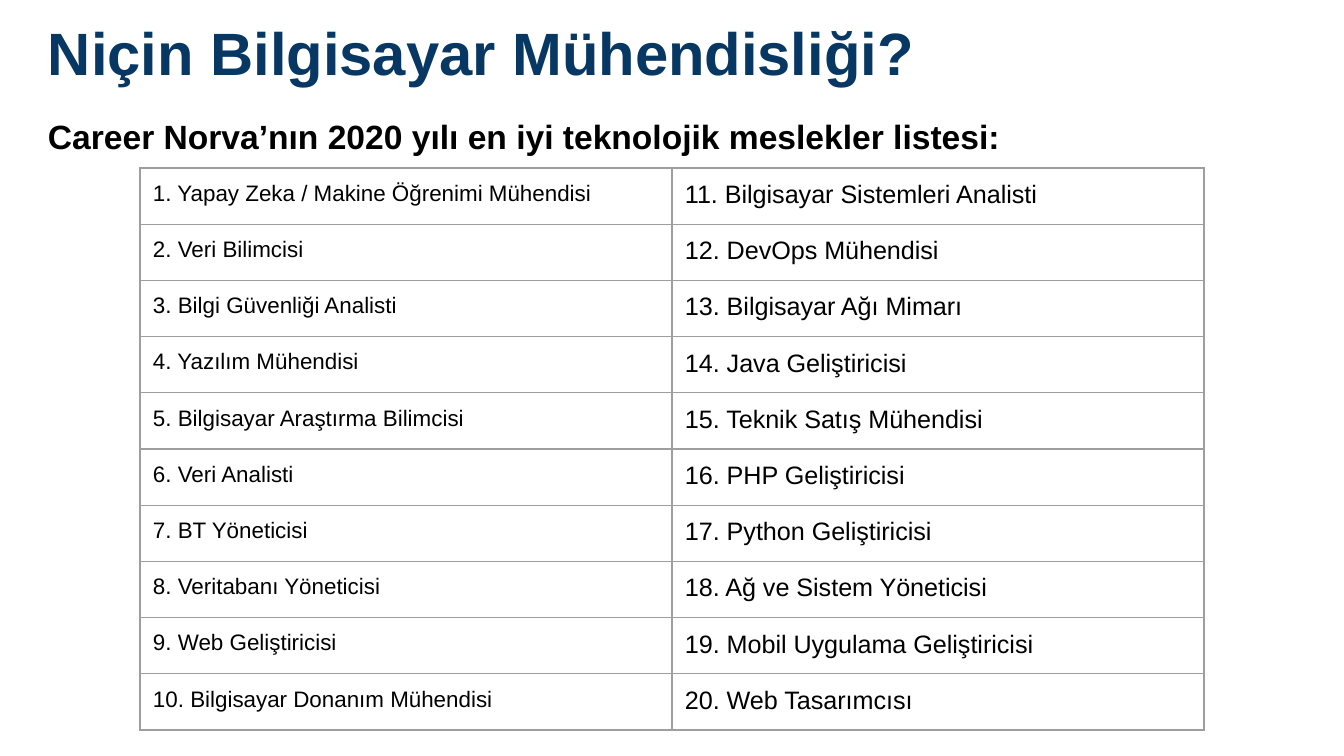
from lxml import etree
from pptx import Presentation
from pptx.dml.color import RGBColor
from pptx.enum.text import MSO_ANCHOR, PP_ALIGN
from pptx.oxml.ns import qn
from pptx.util import Emu, Pt

PX = 914400 / 134.4
TOP = MSO_ANCHOR.TOP
LEFT, JUSTIFY = PP_ALIGN.LEFT, PP_ALIGN.JUSTIFY

NAVY = RGBColor(0x07, 0x37, 0x63)
BLACK = RGBColor(0x00, 0x00, 0x00)
GREY = RGBColor(0x9E, 0x9E, 0x9E)

INSET = 13
ROW_HEIGHT = 56
COLUMN_WIDTH = 532
COLUMN_SIZES = (12, 13.5)

JOBS = [
    "Yapay Zeka / Makine Öğrenimi Mühendisi",
    "Veri Bilimcisi",
    "Bilgi Güvenliği Analisti",
    "Yazılım Mühendisi",
    "Bilgisayar Araştırma Bilimcisi",
    "Veri Analisti",
    "BT Yöneticisi",
    "Veritabanı Yöneticisi",
    "Web Geliştiricisi",
    "Bilgisayar Donanım Mühendisi",
    "Bilgisayar Sistemleri Analisti",
    "DevOps Mühendisi",
    "Bilgisayar Ağı Mimarı",
    "Java Geliştiricisi",
    "Teknik Satış Mühendisi",
    "PHP Geliştiricisi",
    "Python Geliştiricisi",
    "Ağ ve Sistem Yöneticisi",
    "Mobil Uygulama Geliştiricisi",
    "Web Tasarımcısı",
]


def px(length):
    return Emu(round(length * PX))


def set_insets(holder):
    for side in ("left", "right", "top", "bottom"):
        setattr(holder, f"margin_{side}", px(INSET))


def write_text(frame, text, size, color=BLACK, bold=False, align=LEFT, spacing=1.0):
    paragraph = frame.paragraphs[0]
    paragraph.alignment = align
    paragraph.line_spacing = spacing
    run = paragraph.add_run()
    run.text = text
    font_format = {"name": "Arial", "size": Pt(size), "bold": bold}
    for attribute, value in font_format.items():
        setattr(run.font, attribute, value)
    run.font.color.rgb = color


def add_heading(slide, top, height, text, size, **text_format):
    heading = slide.shapes.add_textbox(px(35), px(top), px(1253), px(height))
    frame = heading.text_frame
    frame.word_wrap = True
    frame.vertical_anchor = TOP
    set_insets(frame)
    write_text(frame, text, size, **text_format)


def draw_borders(cell):
    properties = cell._tc.get_or_add_tcPr()
    for side in ("lnL", "lnR", "lnT", "lnB"):
        border = etree.SubElement(properties, qn(f"a:{side}"), w=str(Pt(0.75)))
        fill = etree.SubElement(border, qn("a:solidFill"))
        etree.SubElement(fill, qn("a:srgbClr"), val=str(GREY))


def add_job_table(slide):
    """Number the jobs down each column in turn."""
    column_count = len(COLUMN_SIZES)
    row_count = len(JOBS) // column_count
    table = slide.shapes.add_table(
        row_count, column_count, px(140), px(168),
        px(COLUMN_WIDTH * column_count), px(ROW_HEIGHT * row_count),
    ).table
    table.first_row = False
    table.horz_banding = False
    for index, job in enumerate(JOBS):
        column, row = divmod(index, row_count)
        cell = table.cell(row, column)
        set_insets(cell)
        cell.vertical_anchor = TOP
        write_text(cell.text_frame, f"{index + 1}. {job}", COLUMN_SIZES[column])
        draw_borders(cell)
        cell.fill.background()


def main():
    presentation = Presentation()
    presentation.slide_width = px(1344)
    presentation.slide_height = px(756)
    slide = presentation.slides.add_slide(presentation.slide_layouts[6])
    add_heading(slide, 3, 121, "Niçin Bilgisayar Mühendisliği?", 32,
                color=NAVY, bold=True)
    add_heading(slide, 97, 71,
                "Career Norva’nın 2020 yılı en iyi teknolojik meslekler listesi:",
                18, bold=True, align=JUSTIFY, spacing=1.15)
    add_job_table(slide)
    presentation.save("out.pptx")


if __name__ == "__main__":
    main()
